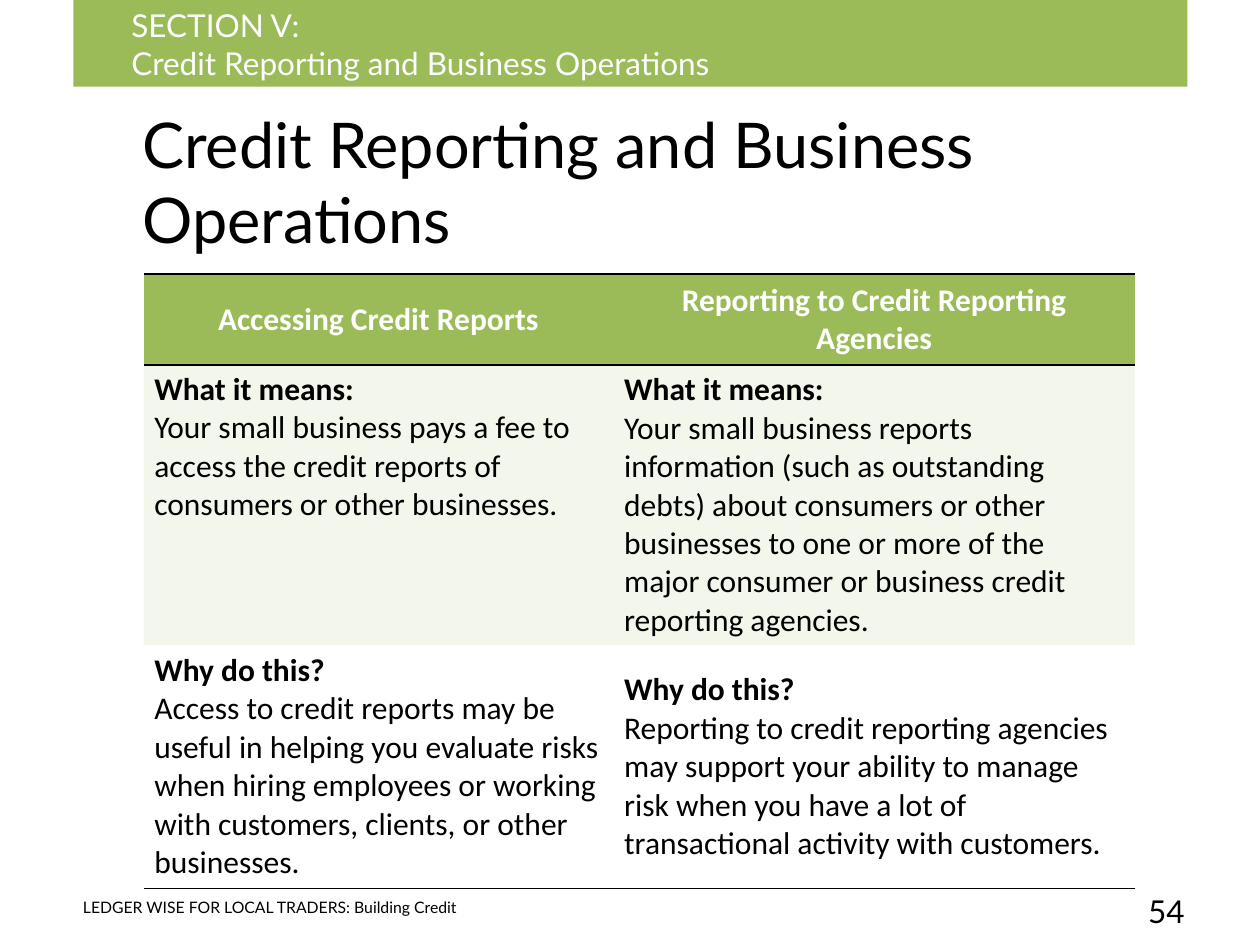
from pptx import Presentation
from pptx.util import Pt
from pptx.dml.color import RGBColor
from pptx.enum.shapes import MSO_SHAPE
from pptx.enum.text import MSO_ANCHOR, PP_ALIGN
from pptx.oxml.ns import qn
from lxml.etree import SubElement, Element

TITLE = "Credit Reporting and Business Operations"
SECTION = "SECTION V:\vCredit Reporting and Business Operations"
FOOTER = "LEDGER WISE FOR LOCAL TRADERS: Building Credit"
PAGE = "54"
HEADS = ["Accessing Credit Reports", "Reporting to Credit Reporting Agencies"]
BODY = [
    ("What it means:", [
        "Your small business pays a fee to access the credit reports of "
        "consumers or other businesses.",
        "Your small business reports information (such as outstanding debts) "
        "about consumers or other businesses to one or more of the major "
        "consumer or business credit reporting agencies.",
    ]),
    ("Why do this?", [
        "Access to credit reports may be useful in helping you evaluate risks "
        "when hiring employees or working with customers, clients, or other "
        "businesses.",
        "Reporting to credit reporting agencies may support your ability to "
        "manage risk when you have a lot of transactional activity with "
        "customers.",
    ]),
]
THEME = {
    "green": "9BBB59", "tint": "C3D69B", "black": "000000", "white": "FFFFFF",
    "font": "Lato", "cell": "Calibri", "title": 36, "text": 18, "small": 9,
}
COLS = [268.5, 298]
ROWS = [52, 160, 139]
RULES = {0, 1, 3}


def color(name):
    return RGBColor.from_string(THEME[name])


def style(para, size, ink, face="font", bold=False, align=PP_ALIGN.LEFT):
    para.alignment = align
    font = para.font
    font.name, font.size, font.bold = THEME[face], Pt(THEME[size]), bold
    font.color.rgb = color(ink)


def label(slide, text, box, size, ink="black", anchor=MSO_ANCHOR.TOP,
          align=PP_ALIGN.LEFT):
    frame = slide.shapes.add_textbox(*map(Pt, box)).text_frame
    frame.word_wrap = True
    frame.vertical_anchor = anchor
    frame.text = text
    style(frame.paragraphs[0], size, ink, align=align)
    return frame


def border(cell, row):
    edges = {"lnL": False, "lnR": False,
             "lnT": row in RULES, "lnB": row + 1 in RULES}
    props = cell._tc.get_or_add_tcPr()
    for spot, (tag, shown) in enumerate(edges.items()):
        line = Element(qn("a:" + tag), w=str(Pt(1)))
        if shown:
            fill = SubElement(line, qn("a:solidFill"))
            SubElement(fill, qn("a:srgbClr"), val=THEME["black"])
        else:
            SubElement(line, qn("a:noFill"))
        props.insert(spot, line)


def paint(cell, row):
    if row == 2:
        cell.fill.background()
        return
    cell.fill.solid()
    cell.fill.fore_color.rgb = color("tint" if row else "green")
    if row:
        tone = cell._tc.tcPr.find(".//" + qn("a:srgbClr"))
        SubElement(tone, qn("a:alpha"), val="20000")


def grid(slide):
    table = slide.shapes.add_table(
        len(ROWS), len(COLS), Pt(82), Pt(156.7),
        Pt(sum(COLS)), Pt(sum(ROWS))).table
    table.first_row = table.horz_banding = False
    for col, width in zip(table.columns, COLS):
        col.width = Pt(width)
    for row, height in zip(table.rows, ROWS):
        row.height = Pt(height)
    texts = [HEADS] + [[f"{lead}\n{text}" for text in pair]
                       for lead, pair in BODY]
    for row, line in enumerate(texts):
        for col, text in enumerate(line):
            cell = table.cell(row, col)
            cell.text = text
            cell.margin_left = cell.margin_right = Pt(6.2)
            cell.margin_top = cell.margin_bottom = Pt(3)
            top = (row, col) == (1, 0)
            cell.vertical_anchor = MSO_ANCHOR.TOP if top else MSO_ANCHOR.MIDDLE
            for spot, para in enumerate(cell.text_frame.paragraphs):
                style(para, "text", "black" if row else "white", "cell",
                      spot == 0, PP_ALIGN.LEFT if row else PP_ALIGN.CENTER)
            paint(cell, row)
            border(cell, row)


def main():
    deck = Presentation()
    deck.slide_width, deck.slide_height = Pt(720), Pt(540)
    slide = deck.slides.add_slide(deck.slide_layouts[6])

    title = label(slide, TITLE, (74.3, 103, 616, 90), "title",
                  anchor=MSO_ANCHOR.BOTTOM)
    title.margin_bottom = Pt(46.5)
    label(slide, PAGE, (615, 506, 69, 23), "text", align=PP_ALIGN.RIGHT)
    label(slide, FOOTER, (40.3, 507, 607.5, 23), "small",
          anchor=MSO_ANCHOR.MIDDLE)
    grid(slide)

    band = slide.shapes.add_shape(
        MSO_SHAPE.RECTANGLE, Pt(42), Pt(0), Pt(636.5), Pt(49.5))
    band.shadow.inherit = False
    band.fill.solid()
    band.fill.fore_color.rgb = color("green")
    band.line.fill.background()
    label(slide, SECTION, (68, 0, 360, 51), "text", "white")

    deck.save("out.pptx")


if __name__ == "__main__":
    main()
